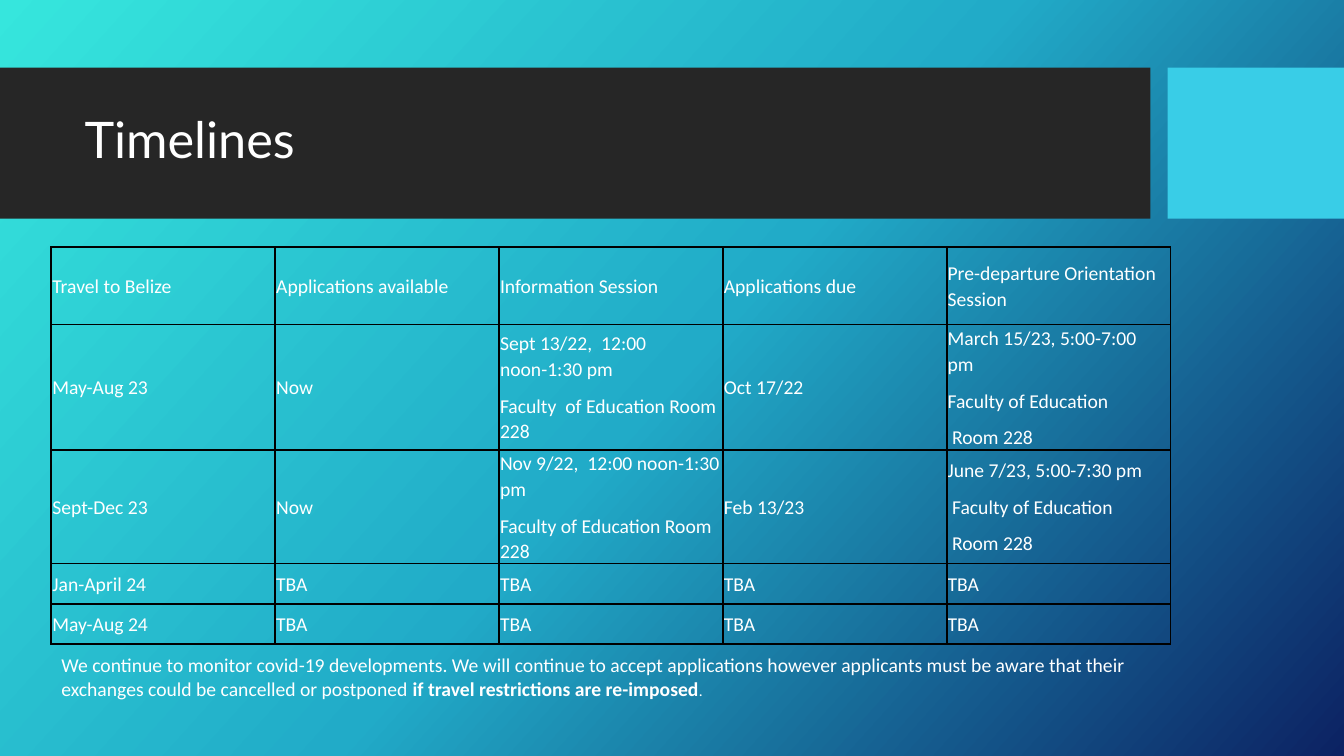
import copy

import pptx
import pptx.dml.color
import pptx.enum.shapes
import pptx.enum.text
import pptx.oxml
import pptx.oxml.ns
import pptx.util

Inches = pptx.util.Inches
Pt = pptx.util.Pt
RGBColor = pptx.dml.color.RGBColor
qn = pptx.oxml.ns.qn
MIDDLE = pptx.enum.text.MSO_ANCHOR.MIDDLE

WHITE = RGBColor(0xFF, 0xFF, 0xFF)
BLACK = RGBColor(0x00, 0x00, 0x00)
CHARCOAL = RGBColor(0x26, 0x26, 0x26)
CYAN = RGBColor(0x39, 0xCD, 0xE7)
AQUA = RGBColor(0x36, 0xE6, 0xDD)
TEAL = RGBColor(0x21, 0xAB, 0xC8)
NAVY = RGBColor(0x0C, 0x22, 0x63)

TBA_ROW = ["TBA"] * 4
TIMELINE = [
    ["Travel to Belize", "Applications available", "Information Session",
     "Applications due", "Pre-departure Orientation Session"],
    ["May-Aug 23", "Now",
     "Sept 13/22,  12:00 noon-1:30 pm\nFaculty  of Education Room 228",
     "Oct 17/22",
     "March 15/23, 5:00-7:00  pm\nFaculty of Education\n Room 228"],
    ["Sept-Dec 23", "Now",
     "Nov 9/22,  12:00 noon-1:30 pm\nFaculty of Education Room 228",
     "Feb 13/23",
     "June 7/23, 5:00-7:30 pm\n Faculty of Education\n Room 228"],
    ["Jan-April 24"] + TBA_ROW,
    ["May-Aug 24"] + TBA_ROW,
]
ROW_HEIGHTS = [0.77, 0.98, 0.98, 0.4, 0.4]
NOTICE = [
    ("We continue to monitor covid-19 developments. We will continue to accept "
     "applications however applicants must be aware that their exchanges could "
     "be cancelled or postponed ", 14, False),
    ("if travel restrictions are re-imposed", 14, True),
    (".", 11, False),
]


class SlideBuilder:
    """Holds the text style and the current slide."""

    def __init__(self, slide, font="Calibri", size=14, color=WHITE):
        self.slide = slide
        self.font, self.size, self.color = font, size, color

    def style(self, r, size=None, font=None, bold=False):
        r.font.name = font or self.font
        r.font.size = Pt(size or self.size)
        r.font.bold = bold
        r.font.color.rgb = self.color

    def background(self, colors, angle):
        fill = self.slide.background.fill
        fill.gradient()
        fill.gradient_angle = 360 - angle
        stops = self.slide.element.find(".//" + qn("a:gsLst"))
        while len(stops) < len(colors):
            stops.append(copy.deepcopy(stops[0]))
        for i, (stop, color) in enumerate(zip(fill.gradient_stops, colors)):
            stop.color.rgb = color
            stop.position = i / (len(colors) - 1)

    def bar(self, x, y, w, h, color):
        sp = self.slide.shapes.add_shape(
            pptx.enum.shapes.MSO_SHAPE.RECTANGLE,
            Inches(x), Inches(y), Inches(w), Inches(h))
        sp.shadow.inherit = False
        sp.fill.solid()
        sp.fill.fore_color.rgb = color
        sp.line.fill.background()

    def text(self, x, y, w, h, runs, font=None, spacing=None):
        sp = self.slide.shapes.add_textbox(
            Inches(x), Inches(y), Inches(w), Inches(h))
        tf = sp.text_frame
        tf.word_wrap = True
        tf.vertical_anchor = MIDDLE
        p = tf.paragraphs[0]
        p.line_spacing = spacing
        for words, size, bold in runs:
            r = p.add_run()
            r.text = words
            self.style(r, size, font, bold)

    def borders(self, cell, color, width):
        tc_pr = cell._tc.get_or_add_tcPr()
        for i, side in enumerate(("lnL", "lnR", "lnT", "lnB")):
            tc_pr.insert(i, pptx.oxml.parse_xml(
                f'<a:{side} {pptx.oxml.ns.nsdecls("a")} w="{Pt(width)}">'
                f'<a:solidFill><a:srgbClr val="{color}"/></a:solidFill>'
                f'</a:{side}>'))

    def table(self, x, y, col_width, heights, rows):
        cols = len(rows[0])
        table = self.slide.shapes.add_table(
            len(rows), cols, Inches(x), Inches(y),
            Inches(col_width * cols), Inches(sum(heights))).table
        table.first_row = table.horz_banding = False
        for col in table.columns:
            col.width = Inches(col_width)
        for row, height, values in zip(table.rows, heights, rows):
            row.height = Inches(height)
            for cell, value in zip(row.cells, values):
                self.cell(cell, value)

    def cell(self, cell, value):
        cell.fill.background()
        self.borders(cell, BLACK, 1.5)
        cell.vertical_anchor = MIDDLE
        cell.margin_left = cell.margin_right = Inches(0.01)
        cell.margin_top = cell.margin_bottom = Inches(0.01)
        cell.text_frame.text = value
        for p in cell.text_frame.paragraphs:
            p.line_spacing = 1.07
            p.space_after = Pt(8)
            for r in p.runs:
                self.style(r)


def main():
    prs = pptx.Presentation()
    prs.slide_width, prs.slide_height = Inches(13.33), Inches(7.5)
    s = SlideBuilder(prs.slides.add_slide(prs.slide_layouts[6]))

    # Background and title band
    s.background([AQUA, TEAL, NAVY], 42)
    s.bar(0, 0.67, 11.41, 1.5, CHARCOAL)
    s.bar(11.58, 0.67, 1.75, 1.5, CYAN)
    s.text(0.74, 0.82, 10.51, 1.18, [("Timelines", 36, False)], "Lato", 0.9)

    # Timeline table
    s.table(0.51, 2.45, 2.22, ROW_HEIGHTS, TIMELINE)

    # Travel notice
    s.text(0.51, 6.43, 11.31, 0.57, NOTICE)

    prs.save("out.pptx")


if __name__ == "__main__":
    main()
